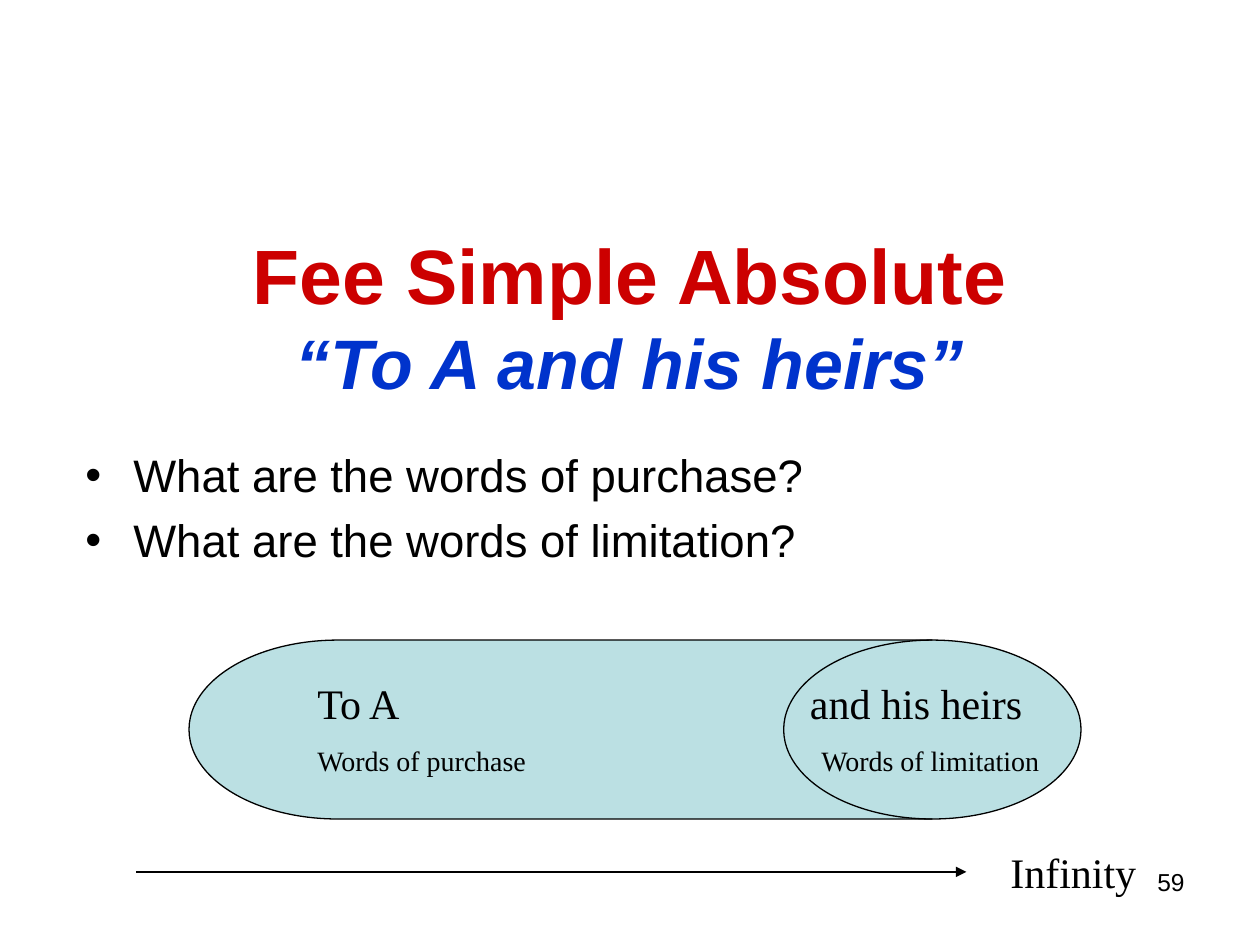
from dataclasses import dataclass

from lxml.etree import SubElement
from pptx import Presentation
from pptx.dml.color import RGBColor
from pptx.enum.shapes import MSO_CONNECTOR, MSO_SHAPE
from pptx.enum.text import MSO_ANCHOR, PP_ALIGN
from pptx.oxml.ns import qn
from pptx.util import Inches, Pt

SANS, SERIF = "Arial", "Times New Roman"
BLACK, RED, BLUE, TEAL = "000000", "CC0000", "0033CC", "BBE0E3"


@dataclass
class Run:
    text: str
    size: float
    font: str = SERIF
    color: str = BLACK
    bold: bool = False
    italic: bool = False


@dataclass
class Para:
    runs: list[Run]
    before: float = 0
    indent: float = 0
    bullet: bool = False
    align: PP_ALIGN = PP_ALIGN.LEFT


@dataclass
class Box:
    left: float
    top: float
    width: float
    height: float
    paras: list[Para]
    anchor: MSO_ANCHOR = MSO_ANCHOR.TOP


def rgb(color: str) -> RGBColor:
    return RGBColor.from_string(color)


def add_box(s, box: Box) -> None:
    sp = s.shapes.add_textbox(Inches(box.left), Inches(box.top),
                              Inches(box.width), Inches(box.height))
    tf = sp.text_frame
    tf.word_wrap = True
    tf.vertical_anchor = box.anchor
    for i, para in enumerate(box.paras):
        p = tf.add_paragraph() if i else tf.paragraphs[0]
        p.alignment = para.align
        p.space_before = Pt(para.before)
        pPr = p._p.get_or_add_pPr()
        pPr.set("marL", str(Inches(para.indent)))
        if para.bullet:
            pPr.set("indent", str(-Inches(para.indent)))
            SubElement(pPr, qn("a:buFont"), typeface=SANS)
            SubElement(pPr, qn("a:buChar"), char="•")
        for j, run in enumerate(para.runs):
            if j:
                p.add_line_break()
            r = p.add_run()
            r.text = run.text
            r.font.size = Pt(run.size)
            r.font.name = run.font
            r.font.bold = run.bold
            r.font.italic = run.italic
            r.font.color.rgb = rgb(run.color)


def style_line(line) -> None:
    line.color.rgb = rgb(BLACK)
    line.width = Pt(0.75)


def add_drum(s, left: float, top: float, width: float, height: float) -> None:
    sp = s.shapes.add_shape(MSO_SHAPE.FLOWCHART_DIRECT_ACCESS_STORAGE,
                            Inches(left), Inches(top), Inches(width), Inches(height))
    sp.shadow.inherit = False
    sp.fill.solid()
    sp.fill.fore_color.rgb = rgb(TEAL)
    style_line(sp.line)


def add_arrow(s, start: float, end: float, y: float) -> None:
    cn = s.shapes.add_connector(MSO_CONNECTOR.STRAIGHT, Inches(start), Inches(y),
                                Inches(end), Inches(y))
    style_line(cn.line)
    SubElement(cn.line._get_or_add_ln(), qn("a:tailEnd"), type="triangle")
    SubElement(cn._element.spPr, qn("a:effectLst"))


def main() -> None:
    prs = Presentation()
    prs.slide_width, prs.slide_height = Inches(10), Inches(7.5)
    s = prs.slides.add_slide(prs.slide_layouts[6])

    # Title and questions
    add_box(s, Box(0.5, 1.42, 9, 2.17, [Para([
        Run("Fee Simple Absolute", 44, SANS, RED, bold=True),
        Run("“To A and his heirs”", 40, SANS, BLUE, bold=True, italic=True),
    ], align=PP_ALIGN.CENTER)], MSO_ANCHOR.MIDDLE))
    questions = ["What are the words of purchase?", "What are the words of limitation?"]
    add_box(s, Box(0.58, 3.5, 9, 0.92, [
        Para([Run(text, 26, SANS)], before=6 if i else 0, indent=0.38, bullet=True)
        for i, text in enumerate(questions)]))

    # Drum with the two parts of the grant
    add_drum(s, 1.5, 5.08, 7.08, 1.42)
    add_box(s, Box(2.42, 5.33, 2.5, 0.9, [
        Para([Run("To A", 24)]),
        Para([Run("Words of purchase", 16)], before=9)]))
    add_box(s, Box(6.25, 5.33, 2.75, 0.9, [
        Para([Run("and his heirs", 24)], indent=0.08),
        Para([Run("Words of limitation", 16)], before=9, indent=0.17)]))

    # Time line and slide number
    add_arrow(s, 1.08, 7.67, 6.92)
    add_box(s, Box(7.92, 6.67, 2.08, 0.5, [Para([Run("Infinity", 24)])]))
    add_box(s, Box(7.17, 6.83, 2.33, 0.52,
                   [Para([Run("59", 14, SANS)], align=PP_ALIGN.RIGHT)]))

    prs.save("out.pptx")


if __name__ == "__main__":
    main()
